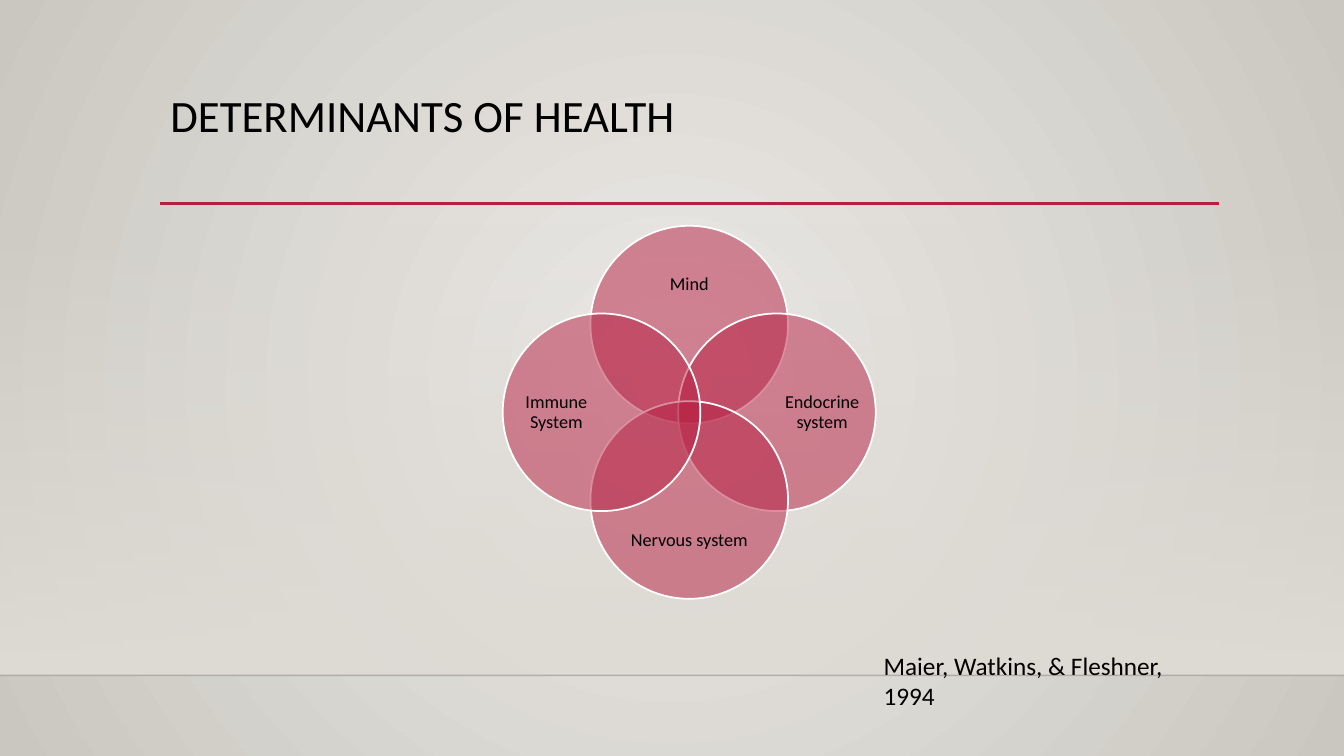
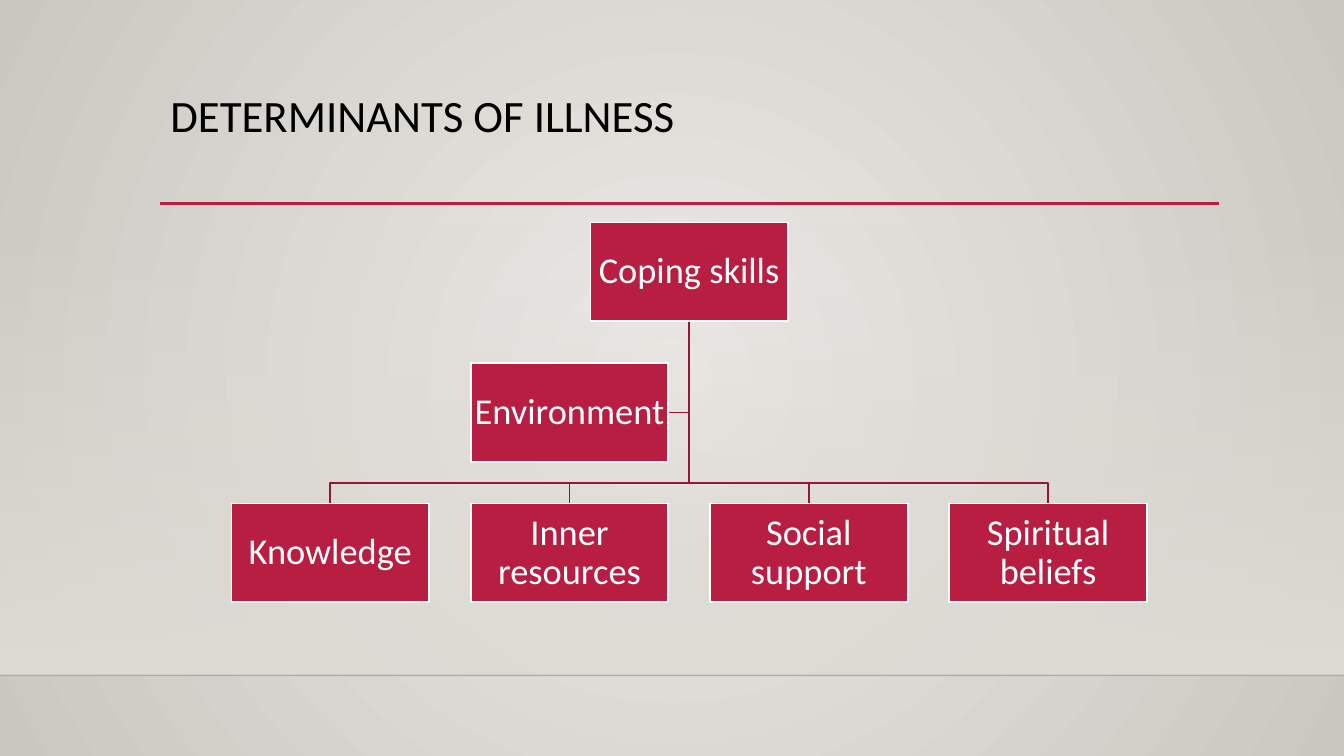
"""Build two slides on the determinants of health and of illness."""
from lxml.etree import SubElement
from pptx import Presentation
from pptx.dml.color import RGBColor
from pptx.enum.shapes import MSO_CONNECTOR, MSO_SHAPE
from pptx.enum.text import MSO_ANCHOR, PP_ALIGN
from pptx.oxml.ns import qn
from pptx.util import Cm, Pt

CRIMSON = RGBColor(0xB7, 0x1E, 0x42)
DARK_CRIMSON = RGBColor(0x93, 0x18, 0x35)
WHITE = RGBColor(0xFF, 0xFF, 0xFF)
BLACK = RGBColor(0, 0, 0)
FLOOR = RGBColor(0, 0, 1)
SAND = RGBColor(0xDF, 0xDB, 0xD5)
BG_CENTRE = RGBColor(0xEC, 0xEA, 0xE7)
BG_EDGE = RGBColor(0xCA, 0xC7, 0xC1)
FONT = "Calibri"

TITLES = ["DETERMINANTS OF HEALTH", "DETERMINANTS OF ILLNESS"]
CITATION = "Maier, Watkins, & Fleshner, 1994"
CIRCLES = [
    ("Mind", 0, -1),
    ("Endocrine system", 1, 0),
    ("Nervous system", 0, 1),
    ("Immune System", -1, 0),
]
ROOT = "Coping skills"
ASSISTANT = "Environment"
LEAVES = ["Knowledge", "Inner resources", "Social support", "Spiritual beliefs"]

SLIDE_W, SLIDE_H = 33.87, 19.05
LEFT, RIGHT, RULE_Y = 4.04, 30.73, 5.13
BAND_Y, FLOOR_Y = 5.61, 17.02
CX, CY = 17.37, 10.39
DIAMETER, SPREAD = 4.98, 2.21
BOX_W, BOX_H, GAP = 4.98, 2.49, 1.05


def write(sp, text, size=18, color=BLACK, align=PP_ALIGN.LEFT,
          anchor=MSO_ANCHOR.TOP, inset=None, spacing=0.9):
    tf = sp.text_frame
    tf.word_wrap = True
    tf.vertical_anchor = anchor
    if inset is not None:
        tf.margin_left = tf.margin_right = Cm(inset)
        tf.margin_top = tf.margin_bottom = Cm(inset)
    p = tf.paragraphs[0]
    p.alignment = align
    p.line_spacing = spacing
    r = p.add_run()
    r.text = text
    r.font.name = FONT
    r.font.size = Pt(size)
    r.font.color.rgb = color


def set_alpha(sp, percent):
    color = next(sp.element.iter(qn("a:srgbClr")))
    SubElement(color, qn("a:alpha"), val=str(percent * 1000))


def set_gradient(fill, *colors):
    fill.gradient()
    for stop, color, position in zip(fill.gradient_stops, colors, (0, 1)):
        stop.color.rgb = color
        stop.position = position


def add_block(slide, kind, x, y, w, h):
    sp = slide.shapes.add_shape(kind, Cm(x), Cm(y), Cm(w), Cm(h))
    sp.shadow.inherit = False
    sp.fill.solid()
    sp.fill.fore_color.rgb = CRIMSON
    sp.line.color.rgb = WHITE
    sp.line.width = Pt(1.25)
    return sp


def add_rule(slide, x1, x2, y, color, width):
    line = slide.shapes.add_connector(
        MSO_CONNECTOR.STRAIGHT, Cm(x1), Cm(y), Cm(x2), Cm(y))
    line.line.color.rgb = color
    line.line.width = Pt(width)
    SubElement(line.element.spPr, qn("a:effectLst"))
    return line


def style_layout(layout, slide):
    set_gradient(layout.background.fill, BG_CENTRE, BG_EDGE)
    grad = next(layout.element.iter(qn("a:gradFill")))
    grad.remove(grad.find(qn("a:lin")))
    radial = SubElement(grad, qn("a:path"), path="circle")
    SubElement(radial, qn("a:fillToRect"),
               l="50000", t="50000", r="50000", b="50000")

    band = add_block(slide, MSO_SHAPE.RECTANGLE, 0, BAND_Y, SLIDE_W, FLOOR_Y - BAND_Y)
    set_gradient(band.fill, SAND, SAND)
    band.fill.gradient_angle = 270
    band.line.fill.background()
    set_alpha(band, 0)
    floor = add_rule(slide, 0, SLIDE_W, FLOOR_Y, FLOOR, 1)
    set_alpha(floor, 20)
    rule = add_rule(slide, LEFT, RIGHT, RULE_Y, CRIMSON, 2.5)
    for number, sp in enumerate((band, floor, rule), 100):
        next(sp.element.iter(qn("p:cNvPr"))).set("id", str(number))
        layout.shapes.element.append(sp.element)


def add_title(slide, text):
    title = slide.shapes.title
    title.left, title.top = Cm(LEFT), Cm(2.24)
    title.width, title.height = Cm(26.67), Cm(2.92)
    write(title, text, size=32)


def add_label(slide, text, x, y, w, h, **fmt):
    box = slide.shapes.add_textbox(Cm(x), Cm(y), Cm(w), Cm(h))
    write(box, text, **fmt)


def draw_venn(slide):
    for text, dx, dy in CIRCLES:
        circle = add_block(slide, MSO_SHAPE.OVAL,
                           CX + dx * SPREAD - DIAMETER / 2,
                           CY + dy * SPREAD - DIAMETER / 2, DIAMETER, DIAMETER)
        set_alpha(circle, 50)
        w, h = (1.91, 3.84) if dx else (3.84, 1.57)
        add_label(slide, text, CX + dx * 3.35 - w / 2, CY + dy * 3.23 - h / 2, w, h,
                  size=13, align=PP_ALIGN.CENTER, anchor=MSO_ANCHOR.MIDDLE, inset=0)
    add_label(slide, CITATION, 22.02, 16.26, 8.74, 1.02, spacing=1)


def add_branch(slide, *points):
    start, *rest = [(Cm(x), Cm(y)) for x, y in points]
    builder = slide.shapes.build_freeform(*start)
    builder.add_line_segments(rest, close=False)
    sp = builder.convert_to_shape()
    sp.shadow.inherit = False
    sp.fill.background()
    sp.line.color.rgb = DARK_CRIMSON
    sp.line.width = Pt(1.25)


def draw_tree(slide):
    centres = [CX + (i - 1.5) * (BOX_W + GAP) for i in range(len(LEAVES))]
    root_y, mid_y, leaf_y = [BAND_Y + i * (BOX_H + GAP) for i in range(3)]
    trunk = (CX, root_y + BOX_H)
    elbow_y = mid_y + BOX_H / 2
    add_branch(slide, trunk, (CX, elbow_y), (centres[1] + BOX_W / 2, elbow_y))
    bus_y = leaf_y - GAP / 2
    for x in centres:
        add_branch(slide, trunk, (CX, bus_y), (x, bus_y), (x, leaf_y))

    boxes = [(ROOT, CX, root_y), (ASSISTANT, centres[1], mid_y)]
    boxes += [(text, x, leaf_y) for text, x in zip(LEAVES, centres)]
    for text, x, y in boxes:
        box = add_block(slide, MSO_SHAPE.RECTANGLE, x - BOX_W / 2, y, BOX_W, BOX_H)
        write(box, text, size=26, color=WHITE, align=PP_ALIGN.CENTER,
              anchor=MSO_ANCHOR.MIDDLE, inset=0.04)


def main():
    prs = Presentation()
    prs.slide_width, prs.slide_height = Cm(SLIDE_W), Cm(SLIDE_H)
    layout = prs.slide_layouts[5]
    slides = [prs.slides.add_slide(layout) for _ in TITLES]
    style_layout(layout, slides[0])
    for slide, title, draw in zip(slides, TITLES, (draw_venn, draw_tree)):
        add_title(slide, title)
        draw(slide)
    prs.save("out.pptx")


if __name__ == "__main__":
    main()
